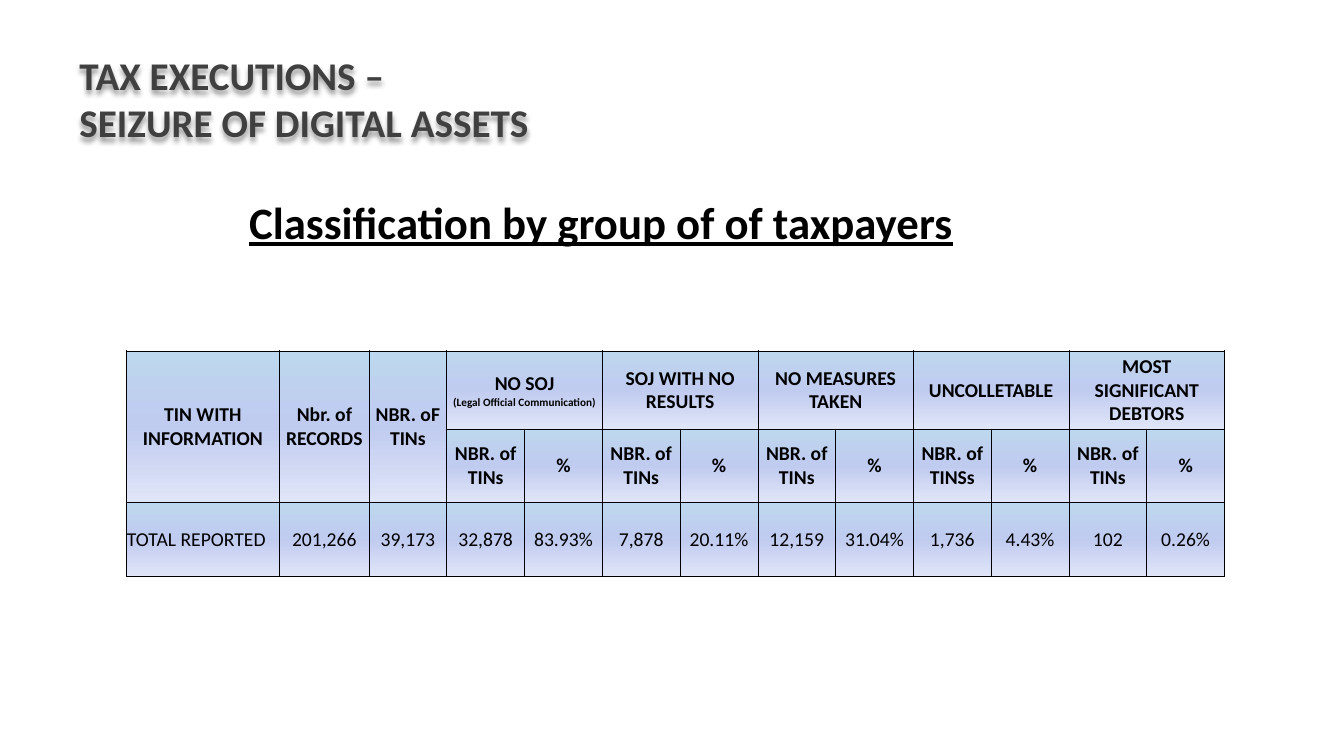
from lxml import etree
from pptx import Presentation
from pptx import util as u
from pptx.dml.color import RGBColor
from pptx.enum import text as tx
from pptx.oxml import ns

BLACK = RGBColor(0x00, 0x00, 0x00)
GREY = RGBColor(0x40, 0x40, 0x40)
SHADES = {0: RGBColor(0xBD, 0xD7, 0xEE),
          50: RGBColor(0xC0, 0xCB, 0xF0),
          100: RGBColor(0xE0, 0xE5, 0xF7)}
MID, LEFT = tx.PP_ALIGN.CENTER, tx.PP_ALIGN.LEFT

TITLE = ["TAX EXECUTIONS –", "SEIZURE OF DIGITAL ASSETS"]
LEADS = ["TIN WITH INFORMATION", "Nbr. of RECORDS", "NBR. oF TINs"]
# Each group spans a count column and a share column
GROUPS = [
    (["NO SOJ", "(Legal Official Communication)"], "NBR. of TINs"),
    (["SOJ WITH NO RESULTS"], "NBR. of TINs"),
    (["NO MEASURES TAKEN"], "NBR. of TINs"),
    (["UNCOLLETABLE"], "NBR. of TINSs"),
    (["MOST SIGNIFICANT DEBTORS"], "NBR. of TINs"),
]
TOTALS = ["TOTAL REPORTED", "201,266", "39,173", "32,878", "83.93%", "7,878",
          "20.11%", "12,159", "31.04%", "1,736", "4.43%", "102", "0.26%"]
WIDTHS = [3.87, 2.25] + [1.96] * 11
HEIGHTS = [1.97, 1.85, 1.85]


def add(node, tag, **attrs):
    """Append a child element with the given attributes."""
    names = {key: str(val) for key, val in attrs.items()}
    return etree.SubElement(node, ns.qn(tag), names)


def write(frame, lines, align=MID, **form):
    """Fill a text frame, one paragraph a line."""
    look = {"name": "Calibri", "bold": True, **form}
    color = look.pop("color", BLACK)
    for num, line in enumerate(lines):
        para = frame.paragraphs[0] if num == 0 else frame.add_paragraph()
        para.alignment = align
        run = para.add_run()
        run.text = line
        run.font.color.rgb = color
        for key, val in look.items():
            setattr(run.font, key, val)


def label(slide, box, lines, **form):
    """Add a wrapped text box; box is left, top, width, height in cm."""
    shape = slide.shapes.add_textbox(*map(u.Cm, box))
    shape.text_frame.word_wrap = True
    write(shape.text_frame, lines, **form)
    return shape


def shadow(shape):
    """Cast a soft shadow straight down from the text."""
    effects = add(shape._element.spPr, "a:effectLst")
    outer = add(effects, "a:outerShdw", blurRad=u.Pt(4), dist=u.Pt(3),
                dir=5400000, algn="t", rotWithShape=0)
    add(add(outer, "a:srgbClr", val=BLACK), "a:alpha", val=40000)


def dress(cell):
    """Give a cell its margins, borders and gradient."""
    form = {"margin_left": u.Cm(0.02), "margin_right": u.Cm(0.02),
            "margin_top": u.Cm(0.02), "margin_bottom": 0,
            "vertical_anchor": tx.MSO_ANCHOR.MIDDLE}
    for key, val in form.items():
        setattr(cell, key, val)
    props = cell._tc.get_or_add_tcPr()
    for side in "LRTB":
        line = add(props, f"a:ln{side}", w=u.Pt(0.5))
        add(add(line, "a:solidFill"), "a:srgbClr", val=BLACK)
    grad = add(props, "a:gradFill", rotWithShape=1)
    stops = add(grad, "a:gsLst")
    for pos, color in SHADES.items():
        add(add(stops, "a:gs", pos=pos * 1000), "a:srgbClr", val=color)
    add(grad, "a:lin", ang=5400000, scaled=0)


def grid(slide):
    """Build the table of taxpayer groups."""
    size = [3.18, 8.84, sum(WIDTHS), sum(HEIGHTS)]
    table = slide.shapes.add_table(
        len(HEIGHTS), len(WIDTHS), *map(u.Cm, size)).table
    table.first_row = table.horz_banding = False
    for col, width in zip(table.columns, WIDTHS):
        col.width = u.Cm(width)
    for row, height in zip(table.rows, HEIGHTS):
        row.height = u.Cm(height)
    for cell in table.iter_cells():
        dress(cell)

    def put(row, col, lines, **form):
        write(table.cell(row, col).text_frame, lines,
              **{"size": u.Pt(14), **form})

    # Headings
    for col, head in enumerate(LEADS):
        table.cell(0, col).merge(table.cell(1, col))
        put(0, col, [head])
    for num, (lines, count) in enumerate(GROUPS):
        col = len(LEADS) + 2 * num
        table.cell(0, col).merge(table.cell(0, col + 1))
        put(0, col, lines)
        for para in table.cell(0, col).text_frame.paragraphs[1:]:
            para.runs[0].font.size = u.Pt(8)
        put(1, col, [count])
        put(1, col + 1, ["%"])

    # Totals
    for col, total in enumerate(TOTALS):
        put(2, col, [total], bold=False, align=MID if col else LEFT)


def main():
    deck = Presentation()
    deck.slide_width, deck.slide_height = u.Cm(33.87), u.Cm(19.05)
    slide = deck.slides.add_slide(deck.slide_layouts[6])
    # Title and subtitle
    title = label(slide, (1.75, 1.17, 16.84, 2.64), TITLE,
                  align=LEFT, size=u.Pt(28), color=GREY)
    shadow(title)
    label(slide, (1.83, 4.78, 26.64, 1.63),
          ["Classification by group of of taxpayers"],
          size=u.Pt(32), underline=True)
    # Figures
    grid(slide)
    deck.save("out.pptx")


if __name__ == "__main__":
    main()
